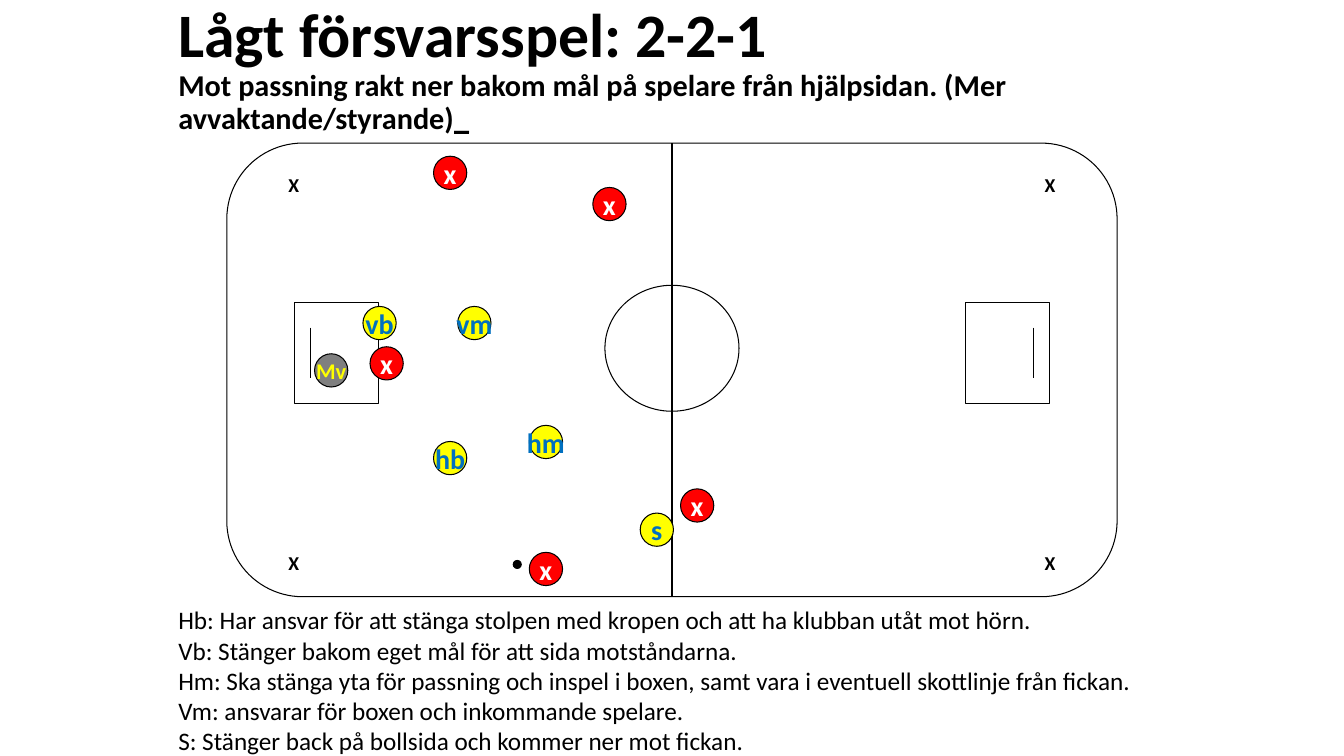
"""Build a floorball slide showing a low 2-2-1 defence."""
import pptx
import pptx.util
import pptx.dml.color
import pptx.enum.shapes
import pptx.enum.text
import pptx.oxml
import pptx.oxml.ns
from lxml import etree

Inches, Pt = pptx.util.Inches, pptx.util.Pt
SHAPE = pptx.enum.shapes.MSO_SHAPE
ANCHOR = pptx.enum.text.MSO_ANCHOR
ALIGN = pptx.enum.text.PP_ALIGN

TITLE = [
    ("Lågt försvarsspel: 2-2-1", 44.1, False),
    ("Mot passning rakt ner bakom mål på spelare från hjälpsidan. "
     "(Mer avvaktande/styrande)", 21.6, False),
    ("_", 21.6, True),
]
ROLES = [
    "Hb: Har ansvar för att stänga stolpen med kropen och att ha klubban utåt mot hörn.",
    "Vb: Stänger bakom eget mål för att sida motståndarna.",
    "Hm: Ska stänga yta för passning och inspel i boxen, samt vara i eventuell "
    "skottlinje från fickan.",
    "Vm: ansvarar för boxen och inkommande spelare.",
    "S: Stänger back på bollsida och kommer ner mot fickan.",
]
RINK = (2.25, 1.42, 8.83, 4.5)
GOAL_AREAS = [(2.92, 3.08), (9.58, 10.25)]
CORNER_X = [2.76, 10.26]
CORNER_Y = [1.67, 5.42]
CENTRE_CIRCLE = (6, 2.83, 1.33, 1.25)
BALL = (5.09, 5.56, 0.08, 0.08)
PLAYER_SIZE = 0.33
GOALKEEPER = ("Mv", 3.12, 3.51)
DEFENDERS = [("hm", 5.25, 4.22), ("vm", 4.54, 3.04), ("vb", 3.6, 3.04),
             ("hb", 4.3, 4.38), ("s", 6.35, 5.09)]
ATTACKERS = [("x", 5.25, 5.48), ("x", 5.88, 1.86), ("x", 6.75, 4.85),
             ("x", 4.3, 1.55), ("x", 3.67, 3.44)]

BLACK, WHITE, YELLOW, RED, BLUE = "000000", "FFFFFF", "FFFF00", "FF0000", "0070C0"

deck = pptx.Presentation()
deck.slide_width, deck.slide_height = Inches(13.33), Inches(7.5)
slide = deck.slides.add_slide(deck.slide_layouts[6])


def paint(color_format, hex_color):
    color_format.rgb = pptx.dml.color.RGBColor.from_string(hex_color)


def style(paragraph, size, color, bold=True, align=ALIGN.LEFT):
    paragraph.alignment = align
    font = paragraph.font
    font.name, font.bold = "Calibri", bold
    if size:
        font.size = Pt(size)
    paint(font.color, color)


def outlined(kind, box, fill=None):
    shape = slide.shapes.add_shape(kind, *map(Inches, box))
    shape.shadow.inherit = False
    if fill:
        shape.fill.solid()
        paint(shape.fill.fore_color, fill)
    else:
        shape.fill.background()
    paint(shape.line.color, BLACK)
    shape.line.width = Pt(0.75)
    return shape


def straight_line(x, top, bottom):
    line = slide.shapes.add_connector(
        pptx.enum.shapes.MSO_CONNECTOR.STRAIGHT,
        Inches(x), Inches(top), Inches(x), Inches(bottom))
    paint(line.line.color, BLACK)
    line.line.width = Pt(0.75)
    etree.SubElement(line._element.spPr, pptx.oxml.ns.qn("a:effectLst"))
    return line


def text_frame(box, wrap=True, anchor=ANCHOR.TOP):
    frame = slide.shapes.add_textbox(*map(Inches, box)).text_frame
    frame.word_wrap, frame.vertical_anchor = wrap, anchor
    return frame


def player(label, left, top, fill, color, size=20):
    disc = outlined(SHAPE.OVAL, (left, top, PLAYER_SIZE, PLAYER_SIZE), fill)
    frame = disc.text_frame
    frame.word_wrap, frame.vertical_anchor = False, ANCHOR.MIDDLE
    frame.text = label
    style(frame.paragraphs[0], size, color, align=ALIGN.CENTER)
    return disc


heading = text_frame((1.67, 0, 10, 1.39), anchor=ANCHOR.MIDDLE).paragraphs[0]
heading.line_spacing = 0.9
style(heading, None, BLACK)
for index, (words, size, underlined) in enumerate(TITLE):
    if index == 1:
        heading.add_line_break()
    run = heading.add_run()
    run.text = words
    run.font.size = Pt(size)
    if underlined:
        run.font.underline = True

rink = outlined(SHAPE.ROUNDED_RECTANGLE, RINK)
rink.adjustments[0] = 0.167
for area_left, goal_line_x in GOAL_AREAS:
    outlined(SHAPE.RECTANGLE, (area_left, 3, 0.83, 1))
    straight_line(goal_line_x, 3.25, 3.75)
halfway = straight_line(RINK[0] + RINK[2] / 2, RINK[1], RINK[1] + RINK[3])
halfway.begin_connect(rink, 0)
halfway.end_connect(rink, 2)

for x in CORNER_X:
    for y in CORNER_Y:
        corner = text_frame((x, y, 0.31, 0.34), wrap=False)
        corner.text = "X"
        style(corner.paragraphs[0], 14, BLACK, align=ALIGN.CENTER)

outlined(SHAPE.OVAL, CENTRE_CIRCLE)
goalkeeper = player(*GOALKEEPER, BLACK, YELLOW, 16)
goalkeeper_fill = goalkeeper._element.spPr.find(pptx.oxml.ns.qn("a:solidFill"))
etree.SubElement(goalkeeper_fill[0], pptx.oxml.ns.qn("a:alpha"), val="50000")
for defender in DEFENDERS:
    player(*defender, YELLOW, BLUE)
outlined(SHAPE.OVAL, BALL, BLACK)
for attacker in ATTACKERS:
    player(*attacker, RED, WHITE)

roles = text_frame((1.67, 5.95, 10, 1.6))
roles.text = "\n".join(ROLES)
for role in roles.paragraphs:
    style(role, 18, BLACK, bold=False)

deck.save("out.pptx")
